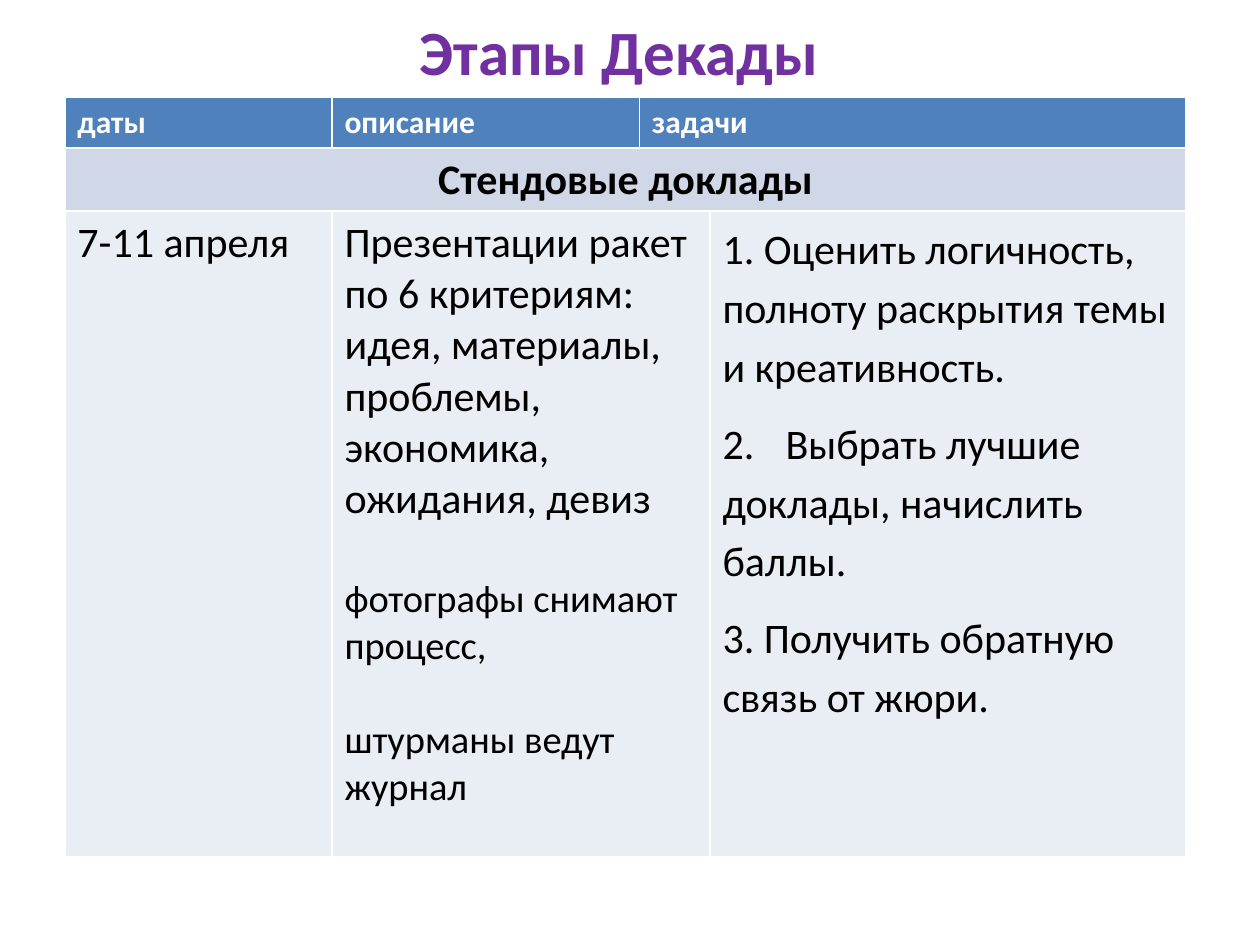
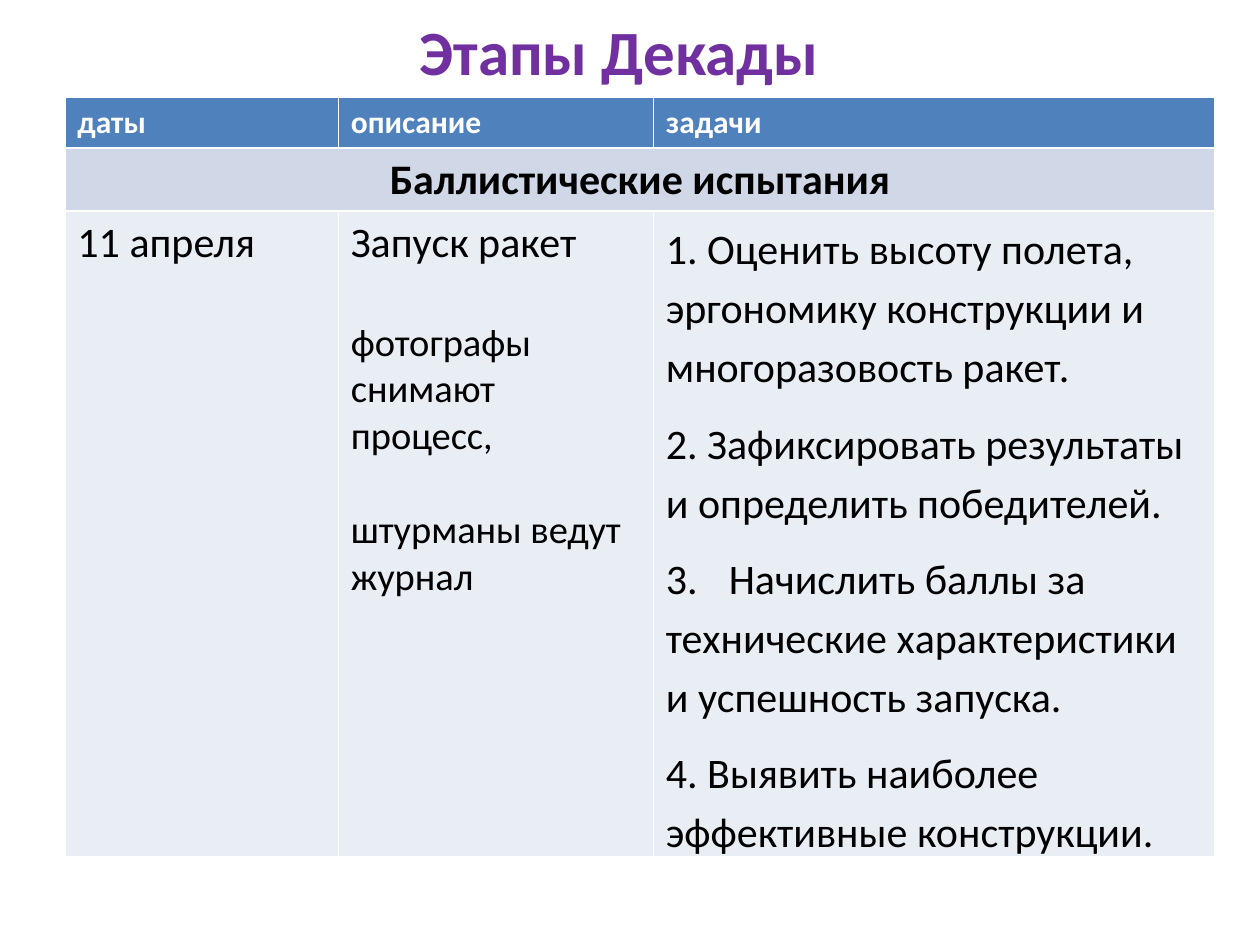
"""Build two slides on the stages of a rocket decade, each with a table of dates, descriptions and tasks."""
from dataclasses import dataclass

from lxml.etree import SubElement
from pptx import Presentation
from pptx.dml.color import RGBColor as Rgb
from pptx.enum.text import PP_ALIGN as Align
from pptx.oxml.ns import qn
from pptx.util import Inches, Pt


@dataclass(frozen=True)
class Theme:
    font: str = "Calibri"
    purple: str = "7030A0"
    header: str = "4F81BD"
    band: str = "D0D8E8"
    body: str = "E9EDF4"
    white: str = "FFFFFF"
    black: str = "000000"
    title_size: int = 36
    header_size: int = 18
    text_size: int = 24
    note_size: int = 22


THEME = Theme()
UNIT = Inches(0.1)
COLUMNS, ROWS = 100, 75
TABLE_LEFT, TABLE_TOP = 5.15, 7.75
ROW_HEIGHTS = 4, 5, 51.2
TITLE = "Этапы Декады"
HEADINGS = "даты", "описание", "задачи"
NOTES = "фотографы снимают процесс,", "штурманы ведут журнал"
NOTE_GAPS = 29, 27

STAGES = [
    {
        "name": "Стендовые доклады",
        "dates": "7-11 апреля",
        "summary": "Презентации ракет по 6 критериям: идея, материалы, проблемы, "
                   "экономика, ожидания, девиз",
        "tasks": [
            "1. Оценить логичность, полноту раскрытия темы и креативность.",
            "2. \tВыбрать лучшие доклады, начислить баллы.",
            "3. Получить обратную связь от жюри.",
        ],
        "widths": [21.2, 24.4, 5.6, 37.8],
        "heading_spans": [(0, 0), (1, 1), (2, 3)],
        "detail_spans": [(0, 0), (1, 2), (3, 3)],
    },
    {
        "name": "Баллистические испытания",
        "dates": "11 апреля",
        "summary": "Запуск ракет",
        "tasks": [
            "1. Оценить высоту полета, эргономику конструкции и многоразовость ракет.",
            "2. Зафиксировать результаты и определить победителей.",
            "3. \tНачислить баллы за технические характеристики и успешность запуска.",
            "4. Выявить наиболее эффективные конструкции.",
        ],
        "widths": [21.7, 25, 44.6],
        "heading_spans": [(0, 0), (1, 1), (2, 2)],
        "detail_spans": [(0, 0), (1, 1), (2, 2)],
    },
]


def write(frame, text, size=THEME.text_size, color=THEME.black, bold=False,
          align=Align.LEFT, before=None, after=None, spacing=None, tab=None):
    paragraph = frame.paragraphs[0] if not frame.text else frame.add_paragraph()
    paragraph.alignment = align
    if before:
        paragraph.space_before = Pt(before)
    if after:
        paragraph.space_after = Pt(after)
    if spacing:
        paragraph.line_spacing = spacing
    if tab:
        stops = SubElement(paragraph._p.get_or_add_pPr(), qn("a:tabLst"))
        SubElement(stops, qn("a:tab"), pos=str(int(tab * UNIT)), algn="l")
    run = paragraph.add_run()
    run.text = text
    run.font.name = THEME.font
    run.font.size = Pt(size)
    run.font.bold = bold
    run.font.color.rgb = Rgb.from_string(color)


def open_cell(table, row, span, fill):
    first, last = span
    cell = table.cell(row, first)
    if last > first:
        cell.merge(table.cell(row, last))
    cell.fill.solid()
    cell.fill.fore_color.rgb = Rgb.from_string(fill)
    return cell.text_frame


deck = Presentation()
deck.slide_width = COLUMNS * UNIT
deck.slide_height = ROWS * UNIT

for stage in STAGES:
    slide = deck.slides.add_slide(deck.slide_layouts[6])

    heading = slide.shapes.add_textbox(
        int(17 * UNIT), int(0.5 * UNIT), int(65.4 * UNIT), int(7.1 * UNIT)).text_frame
    heading.word_wrap = True
    heading.margin_right = int(2.1 * UNIT)
    write(heading, TITLE, size=THEME.title_size, color=THEME.purple, bold=True, align=Align.CENTER)

    widths = stage["widths"]
    schedule = slide.shapes.add_table(
        len(ROW_HEIGHTS), len(widths), int(TABLE_LEFT * UNIT), int(TABLE_TOP * UNIT),
        int(sum(widths) * UNIT), int(sum(ROW_HEIGHTS) * UNIT)).table
    for column, width in zip(schedule.columns, widths):
        column.width = int(width * UNIT)
    for row, height in zip(schedule.rows, ROW_HEIGHTS):
        row.height = int(height * UNIT)

    for label, span in zip(HEADINGS, stage["heading_spans"]):
        write(open_cell(schedule, 0, span, THEME.header), label,
              size=THEME.header_size, color=THEME.white, bold=True)

    stage_name = open_cell(schedule, 1, (0, len(widths) - 1), THEME.band)
    write(stage_name, stage["name"], bold=True, align=Align.CENTER)

    dates, description, tasks = [
        open_cell(schedule, 2, span, THEME.body) for span in stage["detail_spans"]]
    write(dates, stage["dates"])
    write(description, stage["summary"])
    for note, gap in zip(NOTES, NOTE_GAPS):
        write(description, note, size=THEME.note_size, before=gap)
    for task in stage["tasks"]:
        write(tasks, task, after=10, spacing=1.15, tab=5)

deck.save("out.pptx")
